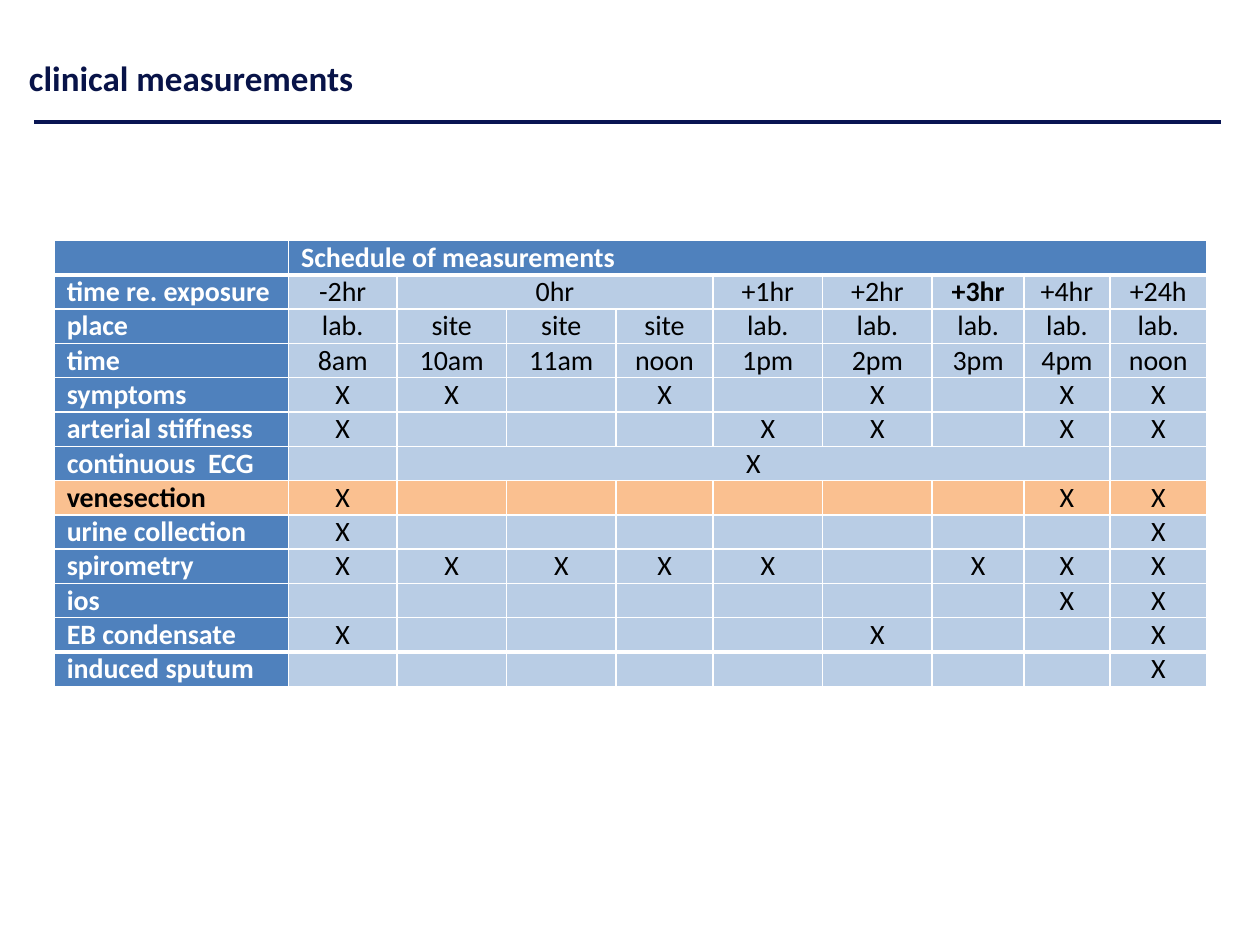
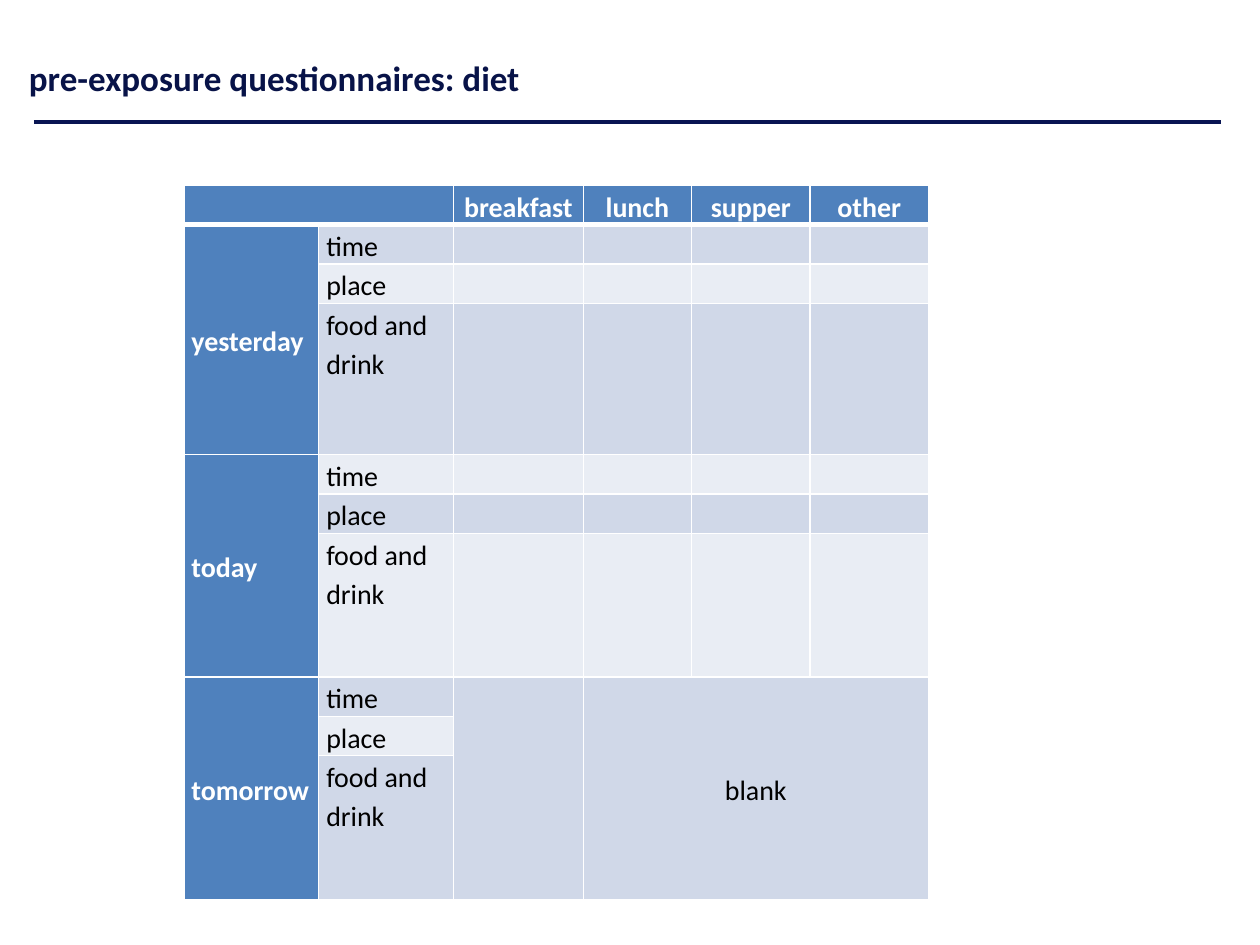
from dataclasses import dataclass

import pptx
import pptx.dml.color
import pptx.enum.shapes
import pptx.enum.text
import pptx.oxml.ns
import pptx.util
from lxml import etree

Inches = pptx.util.Inches
Pt = pptx.util.Pt
Align = pptx.enum.text.PP_ALIGN
Anchor = pptx.enum.text.MSO_ANCHOR
qn = pptx.oxml.ns.qn


@dataclass(frozen=True)
class Theme:
    font: str = "Calibri"
    title_size: int = 20
    table_size: int = 16
    title: str = "081348"
    rule: str = "091553"
    header: str = "4F81BD"
    body: str = "B9CDE5"
    highlight: str = "FAC090"
    bands: tuple = ("D0D8E8", "E9EDF4")
    light: str = "FFFFFF"
    dark: str = "000000"
    rule_width: float = 2.25
    border: int = 1
    heavy_border: int = 3


@dataclass
class CellLook:
    fill: str
    color: str
    bold: bool = False
    align: Align = Align.LEFT
    anchor: Anchor = Anchor.MIDDLE


def rgb(value):
    return pptx.dml.color.RGBColor.from_string(value)


class Deck:
    def __init__(self, theme):
        self.theme = theme
        self.presentation = pptx.Presentation()
        self.presentation.slide_width = Inches(10)
        self.presentation.slide_height = Inches(7.5)
        self.slide = None

    def add_slide(self, heading):
        title_only = self.presentation.slide_layouts[5]
        self.slide = self.presentation.slides.add_slide(title_only)
        title = self.slide.shapes.title
        title.left, title.top = Inches(0.13), Inches(0.11)
        title.width, title.height = Inches(9.42), Inches(1.01)
        frame = title.text_frame
        frame.text = heading
        frame.auto_size = pptx.enum.text.MSO_AUTO_SIZE.NONE
        frame.vertical_anchor = Anchor.MIDDLE
        frame.paragraphs[0].alignment = Align.LEFT
        self.style_runs(frame.paragraphs[0], self.theme.title_size, self.theme.title, True)
        self.add_rule(0.27, 9.69, 0.97)

    def add_rule(self, left, right, y):
        rule = self.slide.shapes.add_connector(
            pptx.enum.shapes.MSO_CONNECTOR.STRAIGHT,
            Inches(left), Inches(y), Inches(right), Inches(y))
        rule.line.color.rgb = rgb(self.theme.rule)
        rule.line.width = Pt(self.theme.rule_width)
        etree.SubElement(rule._element.spPr, qn("a:effectLst"))

    def style_runs(self, paragraph, size, color, bold):
        for run in paragraph.runs:
            run.font.name = self.theme.font
            run.font.size = Pt(size)
            run.font.bold = bold
            run.font.color.rgb = rgb(color)

    def add_table(self, left, top, widths, heights, texts, look, merges,
                  inset, spacing=None, heavy_after=(0,)):
        """look(row, column) gives each CellLook; merges holds (row, column, last row, last column)."""
        table = self.slide.shapes.add_table(
            len(heights), len(widths), Inches(left), Inches(top),
            Inches(sum(widths)), Inches(sum(heights))).table
        table.horz_banding = False
        for column, width in zip(table.columns, widths):
            column.width = Inches(width)
        for row, height in zip(table.rows, heights):
            row.height = Inches(height)
        for row, column, last_row, last_column in merges:
            table.cell(row, column).merge(table.cell(last_row, last_column))
        for r, row_texts in enumerate(texts):
            above = self.border_width(r - 1 in heavy_after)
            below = self.border_width(r in heavy_after)
            for c, text in enumerate(row_texts):
                cell = table.cell(r, c)
                self.add_borders(cell, above, below)
                self.fill_cell(cell, text, look(r, c), inset, spacing)

    def border_width(self, heavy):
        return self.theme.heavy_border if heavy else self.theme.border

    def add_borders(self, cell, above, below):
        properties = cell._tc.get_or_add_tcPr()
        sides = {"L": self.theme.border, "R": self.theme.border, "T": above, "B": below}
        for side, width in sides.items():
            edge = etree.SubElement(properties, qn(f"a:ln{side}"), w=str(Pt(width)))
            paint = etree.SubElement(edge, qn("a:solidFill"))
            etree.SubElement(paint, qn("a:srgbClr"), val=self.theme.light)

    def fill_cell(self, cell, text, look, inset, spacing):
        cell.fill.solid()
        cell.fill.fore_color.rgb = rgb(look.fill)
        cell.margin_left = cell.margin_right = Inches(inset)
        cell.margin_top = cell.margin_bottom = 0
        cell.vertical_anchor = look.anchor
        cell.text_frame.text = text
        paragraph = cell.text_frame.paragraphs[0]
        paragraph.alignment = look.align
        if spacing:
            paragraph.line_spacing = spacing
        self.style_runs(paragraph, self.theme.table_size, look.color, look.bold)
        # Keeps empty cells from growing to the default type size
        etree.SubElement(paragraph._p, qn("a:endParaRPr"), sz=str(self.theme.table_size * 100))


def build_measurements(deck):
    theme = deck.theme
    schedule = [
        ["", "Schedule of measurements"] + [""] * 8,
        ["time re. exposure", "-2hr", "0hr", "", "", "+1hr", "+2hr", "+3hr", "+4hr", "+24h"],
        ["place", "lab."] + ["site"] * 3 + ["lab."] * 5,
        ["time", "8am", "10am", "11am", "noon", "1pm", "2pm", "3pm", "4pm", "noon"],
    ]
    # One character for each visit: X is measured, - is not
    visits_measured = {
        "symptoms": "XX-X-X-XX",
        "arterial stiffness": "X---XX-XX",
        "continuous  ECG": "-X-------",
        "venesection": "X------XX",
        "urine collection": "X-------X",
        "spirometry": "XXXXX-XXX",
        "ios": "-------XX",
        "EB condensate": "X----X--X",
        "induced sputum": "--------X",
    }
    for measurement, visits in visits_measured.items():
        marks = [visit.replace("-", "") for visit in visits]
        schedule.append([measurement] + marks)

    row_names = [row[0] for row in schedule]
    ecg_row = row_names.index("continuous  ECG")
    venesection_row = row_names.index("venesection")
    before_sputum = row_names.index("induced sputum") - 1

    def look(row, column):
        highlighted = row == venesection_row
        if row == 0 or column == 0:
            fill = theme.highlight if highlighted else theme.header
            color = theme.dark if highlighted else theme.light
            return CellLook(fill, color, True, Align.JUSTIFY)
        fill = theme.highlight if highlighted else theme.body
        emphasised = schedule[row][column] == "+3hr"
        return CellLook(fill, theme.dark, emphasised, Align.CENTER)

    deck.add_slide("clinical measurements")
    deck.add_table(
        0.43, 1.91, [1.86, 0.86, 0.87, 0.87, 0.77, 0.87, 0.87, 0.73, 0.68, 0.77],
        [0.27] * len(schedule), schedule, look,
        merges=[(0, 1, 0, 9), (1, 2, 1, 4), (ecg_row, 2, ecg_row, 8)],
        inset=0.1, heavy_after=(0, before_sputum))


def build_diet(deck):
    theme = deck.theme
    meals = ["breakfast", "lunch", "supper", "other"]
    line = 0.31
    food_heights = {"yesterday": 1.2, "today": 1.14, "tomorrow": 1.14}

    diary = [["", ""] + meals]
    heights = [line]
    merges = [(0, 0, 0, 1)]
    for day, food_height in food_heights.items():
        first = len(diary)
        last = first + 2
        no_answers = [""] * len(meals)
        diary.append([day, "time"] + no_answers)
        diary.append(["", "place"] + no_answers)
        diary.append(["", "food and drink"] + no_answers)
        heights += [line, line, food_height]
        merges.append((first, 0, last, 0))
    # After the loop, first and last are the rows of tomorrow
    diary[first][3] = "blank"
    merges += [(first, 2, last, 2), (first, 3, last, 5)]

    def look(row, column):
        align = Align.CENTER if row == 0 or column > 1 else Align.LEFT
        if row == 0 or column == 0:
            return CellLook(theme.header, theme.light, True, align)
        anchor = Anchor.TOP if diary[row][column] == "food and drink" else Anchor.MIDDLE
        return CellLook(theme.bands[(row - 1) % 2], theme.dark, False, align, anchor)

    deck.add_slide("pre-exposure questionnaires: diet")
    deck.add_table(
        1.46, 1.47, [1.07, 1.07, 1.03, 0.86, 0.94, 0.94], heights, diary, look,
        merges=merges, inset=0.06, spacing=1.15)


def main():
    deck = Deck(Theme())
    build_measurements(deck)
    build_diet(deck)
    deck.presentation.save("out.pptx")


if __name__ == "__main__":
    main()
